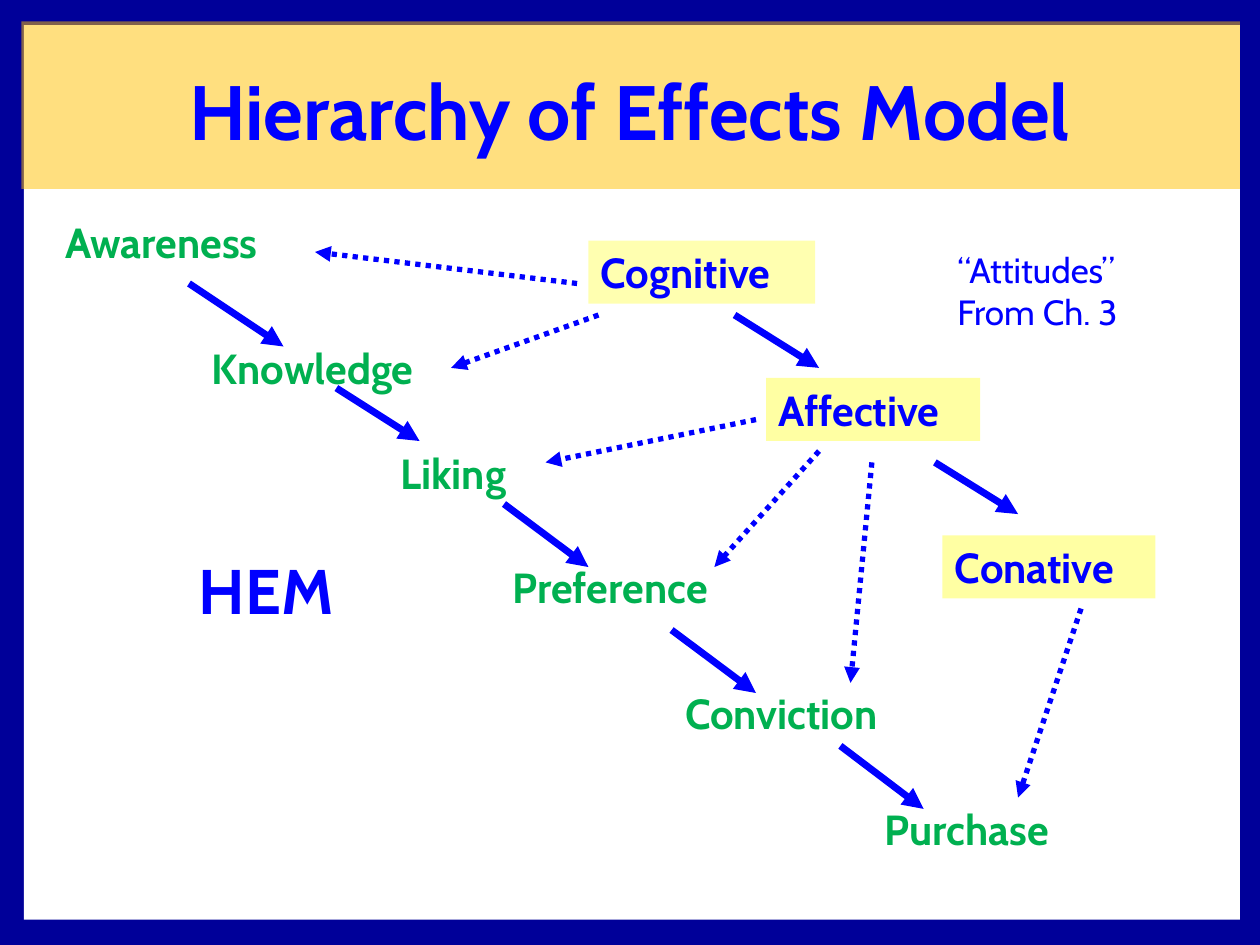
from dataclasses import dataclass

from lxml.etree import SubElement
from pptx import Presentation
from pptx.dml.color import RGBColor
from pptx.enum.dml import MSO_LINE
from pptx.enum.shapes import MSO_CONNECTOR, MSO_SHAPE
from pptx.enum.text import MSO_ANCHOR, PP_ALIGN
from pptx.oxml.ns import qn
from pptx.util import Inches, Pt

NAVY, BLUE, GREEN = "000099", "0000FF", "00B050"
WHITE, GOLD, YELLOW = "FFFFFF", "FFC000", "FFFF00"


@dataclass(frozen=True)
class Area:
    left: float
    top: float
    width: float
    height: float = 0.5

    def lengths(self) -> list:
        return [Inches(value) for value in (self.left, self.top, self.width, self.height)]


@dataclass(frozen=True)
class Label:
    text: str
    area: Area
    color: str = BLUE
    size: int = 24
    bold: bool = True
    align: PP_ALIGN = PP_ALIGN.LEFT
    anchor: MSO_ANCHOR = MSO_ANCHOR.TOP


@dataclass(frozen=True)
class Arrow:
    start: tuple[float, float]
    end: tuple[float, float]


TITLE = Label("Hierarchy of Effects Model", Area(0.75, 0.33, 8.5, 1.08), size=44,
              align=PP_ALIGN.CENTER, anchor=MSO_ANCHOR.MIDDLE)
STEPS = [
    Label("Awareness", Area(0.42, 1.67, 2.04), GREEN),
    Label("Knowledge", Area(1.58, 2.67, 2.09), GREEN),
    Label("Liking", Area(3.08, 3.5, 1.23), GREEN),
    Label("Preference", Area(3.97, 4.41, 2.03), GREEN),
    Label("Conviction", Area(5.34, 5.41, 1.99), GREEN),
    Label("Purchase", Area(6.92, 6.33, 1.75), GREEN),
]
ATTITUDES = [
    (Label("Cognitive", Area(4.67, 1.91, 1.8)), 31),
    (Label("Affective", Area(6.08, 3, 1.7)), 36),
    (Label("Conative", Area(7.48, 4.25, 1.69)), 36),
]
NOTES = [
    Label("“Attitudes” From Ch. 3", Area(7.5, 1.92, 2, 0.77), size=20, bold=False),
    Label("HEM", Area(1.48, 4.33, 1.35, 0.71), size=36),
]
SEQUENCE_ARROWS = [
    Arrow((1.5, 2.25), (2.25, 2.75)),
    Arrow((2.67, 3.08), (3.33, 3.5)),
    Arrow((4, 4), (4.67, 4.5)),
    Arrow((5.33, 5), (6, 5.5)),
    Arrow((6.67, 5.92), (7.33, 6.42)),
    Arrow((5.83, 2.5), (6.5, 2.92)),
    Arrow((7.42, 3.67), (8.08, 4.08)),
]
INFLUENCE_ARROWS = [
    Arrow((4.58, 2.25), (2.5, 2)),
    Arrow((4.75, 2.5), (3.58, 2.92)),
    Arrow((6, 3.33), (4.33, 3.67)),
    Arrow((6.5, 3.58), (5.67, 4.5)),
    Arrow((6.92, 3.67), (6.75, 5.42)),
    Arrow((8.58, 4.83), (8.08, 6.33)),
]


def paint(color_format, color: str) -> None:
    color_format.rgb = RGBColor.from_string(color)


def add_panel(page, area: Area, color: str, opacity: int = 100):
    """Draw a borderless rectangle; opacity is in percent."""
    panel = page.shapes.add_shape(MSO_SHAPE.RECTANGLE, *area.lengths())
    panel.shadow.inherit = False
    panel.line.fill.background()
    panel.fill.solid()
    paint(panel.fill.fore_color, color)
    if opacity < 100:
        rgb = panel.fill._xPr.find(f"{qn('a:solidFill')}/{qn('a:srgbClr')}")
        SubElement(rgb, qn("a:alpha"), val=str(opacity * 1000))
    return panel


def write_text(box, label: Label) -> None:
    frame = box.text_frame
    frame.word_wrap = True
    frame.vertical_anchor = label.anchor
    para = frame.paragraphs[0]
    para.alignment = label.align
    span = para.add_run()
    span.text = label.text
    formats = {"name": "Cabin", "size": Pt(label.size), "bold": label.bold}
    for attribute, value in formats.items():
        setattr(span.font, attribute, value)
    paint(span.font.color, label.color)


def add_label(page, label: Label) -> None:
    write_text(page.shapes.add_textbox(*label.area.lengths()), label)


def add_arrow(page, arrow: Arrow, width: float, dash: MSO_LINE) -> None:
    points = [Inches(value) for value in (*arrow.start, *arrow.end)]
    connector = page.shapes.add_connector(MSO_CONNECTOR.STRAIGHT, *points)
    paint(connector.line.color, BLUE)
    connector.line.width = Pt(width)
    connector.line.dash_style = dash
    SubElement(connector.line._get_or_add_ln(), qn("a:tailEnd"), type="triangle")
    SubElement(connector._element.spPr, qn("a:effectLst"))


def main() -> None:
    deck = Presentation()
    deck.slide_width, deck.slide_height = Inches(10), Inches(7.5)
    page = deck.slides.add_slide(deck.slide_layouts[6])

    add_panel(page, Area(0, -0.07, 10, 7.58), NAVY)
    add_panel(page, Area(0.19, 0.2, 9.65, 7.1), WHITE)
    add_panel(page, Area(0.17, 0.17, 9.67, 1.33), GOLD, 50)

    for label in [TITLE, *STEPS]:
        add_label(page, label)
    for label, opacity in ATTITUDES:
        write_text(add_panel(page, label.area, YELLOW, opacity), label)
    for arrow in INFLUENCE_ARROWS:
        add_arrow(page, arrow, 3, MSO_LINE.ROUND_DOT)
    for arrow in SEQUENCE_ARROWS:
        add_arrow(page, arrow, 4, MSO_LINE.SOLID)
    for label in NOTES:
        add_label(page, label)

    deck.save("out.pptx")


if __name__ == "__main__":
    main()
